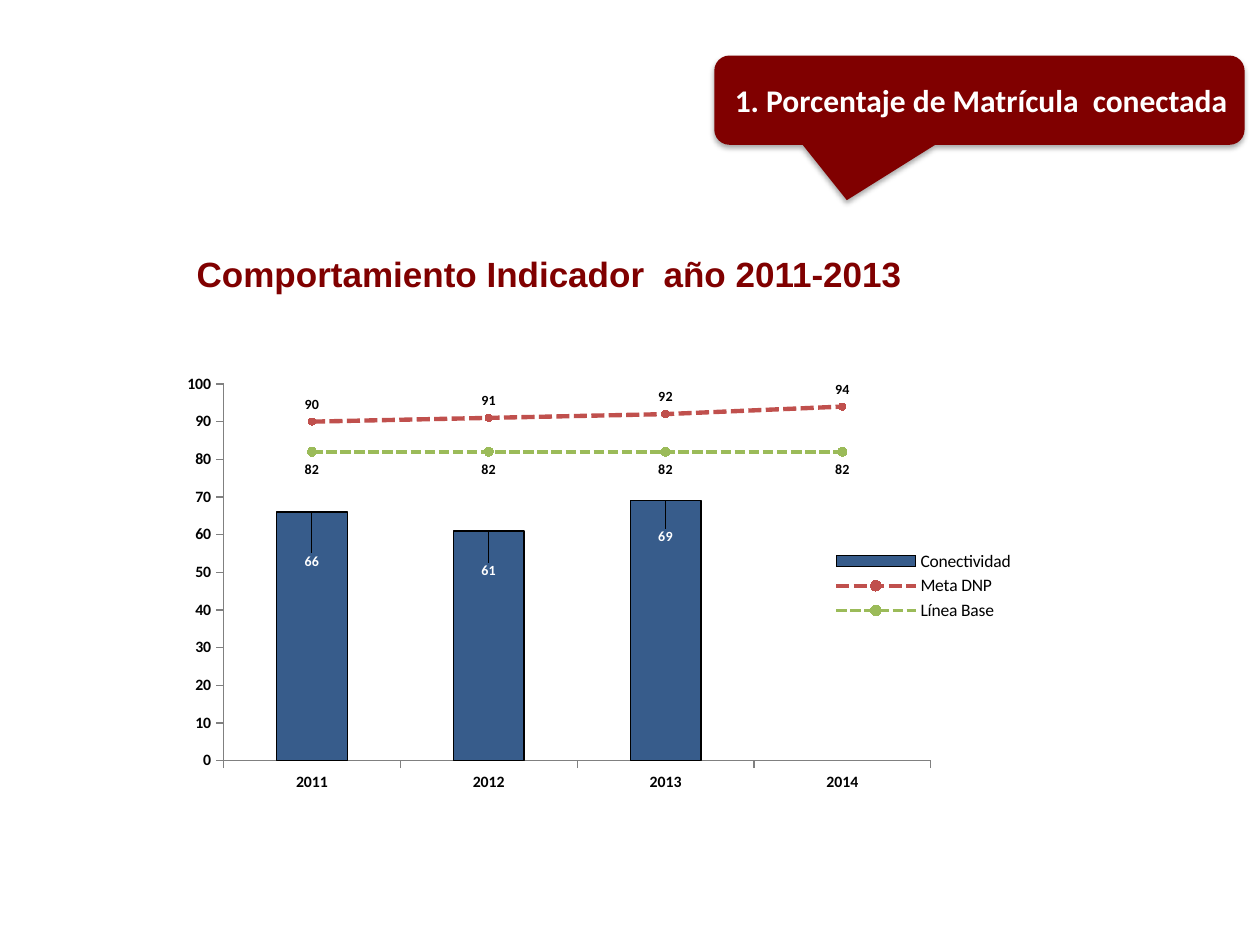
from lxml import etree
from pptx import Presentation
from pptx.chart.data import CategoryChartData
from pptx.dml.color import RGBColor
from pptx.enum.chart import (XL_CHART_TYPE, XL_LABEL_POSITION, XL_LEGEND_POSITION,
                             XL_MARKER_STYLE, XL_TICK_MARK)
from pptx.enum.dml import MSO_LINE
from pptx.enum.shapes import MSO_SHAPE
from pptx.enum.text import MSO_ANCHOR, PP_ALIGN
from pptx.oxml import parse_xml
from pptx.oxml.ns import nsdecls, qn
from pptx.util import Cm, Pt

MAROON = RGBColor(0x80, 0x00, 0x00)
WHITE = RGBColor(0xFF, 0xFF, 0xFF)
BLACK = RGBColor(0x00, 0x00, 0x00)
GRAY = RGBColor(0x80, 0x80, 0x80)
NAVY = RGBColor(0x1F, 0x49, 0x7D)
RED = RGBColor(0xC0, 0x50, 0x4D)
GREEN = RGBColor(0x9B, 0xBB, 0x59)


def style_font(font, size, color, name="Calibri", bold=True):
    font.size = Pt(size)
    font.bold = bold
    font.name = name
    font.color.rgb = color


def manual_layout(**values):
    tags = "".join(f'<c:{tag} val="{val}"/>' for tag, val in values.items())
    return parse_xml(f'<c:layout {nsdecls("c")}><c:manualLayout>{tags}'
                     '</c:manualLayout></c:layout>')


prs = Presentation()
prs.slide_width, prs.slide_height = Cm(25.4), Cm(19.05)
s = prs.slides.add_slide(prs.slide_layouts[5])

title = s.shapes.title
title.left, title.top, title.width, title.height = Cm(3.71), Cm(3.73), Cm(19.71), Cm(3.58)
tf = title.text_frame
tf.vertical_anchor = MSO_ANCHOR.MIDDLE
p = tf.paragraphs[0]
p.alignment = PP_ALIGN.LEFT
r = p.add_run()
r.text = "Comportamiento Indicador  año 2011-2013"
style_font(r.font, 20, MAROON, "Arial")

data = CategoryChartData()
data.categories = ["2011", "2012", "2013", "2014"]
data.add_series("Conectividad", (66, 61, 69, None))
data.add_series("Meta DNP", (90, 91, 92, 94))
data.add_series("Línea Base", (82, 82, 82, 82))
chart = s.shapes.add_chart(XL_CHART_TYPE.COLUMN_CLUSTERED, Cm(3.1), Cm(7.29),
                           Cm(17.6), Cm(9.04), data).chart
chart.has_title = False
style_font(chart.font, 10, BLACK, bold=False)
chart.has_legend = True
chart.legend.position = XL_LEGEND_POSITION.RIGHT
chart.legend.include_in_layout = False

for axis in (chart.category_axis, chart.value_axis):
    axis.has_major_gridlines = False
    axis.major_tick_mark = XL_TICK_MARK.OUTSIDE
    axis.format.line.color.rgb = GRAY
    style_font(axis.tick_labels.font, 9, BLACK)
chart.value_axis.minimum_scale = 0
chart.value_axis.maximum_scale = 100
chart.value_axis.major_unit = 10

plot_area = chart.plots[0]._element.getparent()
for old in plot_area.findall(qn("c:layout")):
    plot_area.remove(old)
plot_area.insert(0, manual_layout(layoutTarget="inner", xMode="edge", yMode="edge",
                                  x=0.08, y=0.05, w=0.81, h=0.84))

bar_chart = chart.plots[0]._element
line_chart = parse_xml(f'<c:lineChart {nsdecls("c")}><c:grouping val="standard"/>'
                       '<c:varyColors val="0"/><c:marker val="1"/></c:lineChart>')
for ser in bar_chart.findall(qn("c:ser"))[1:]:
    for invert in ser.findall(qn("c:invertIfNegative")):
        ser.remove(invert)
    line_chart.find(qn("c:marker")).addprevious(ser)
for ax_id in bar_chart.findall(qn("c:axId")):
    etree.SubElement(line_chart, qn("c:axId")).set("val", ax_id.get("val"))
bar_chart.addnext(line_chart)

bar_plot, line_plot = chart.plots
bar_plot.gap_width = 150
bar_plot.vary_by_categories = False
bars = bar_plot.series[0]
bars.format.fill.solid()
bars.format.fill.fore_color.rgb = NAVY
color = bars.format.fill._xPr.find(qn("a:solidFill"))[0]
etree.SubElement(color, qn("a:alpha")).set("val", "89000")
bars.format.line.color.rgb = BLACK
bars.format.line.width = Pt(0.75)
bars.data_labels.show_value = True
style_font(bars.data_labels.font, 8, WHITE)
for i, drop in enumerate((0.08, 0.06, 0.05)):
    label = bars.points[i].data_label
    style_font(label.font, 8, WHITE)
    label.position = XL_LABEL_POSITION.INSIDE_END
    idx = bars.data_labels._element.findall(qn("c:dLbl"))[i].find(qn("c:idx"))
    idx.addnext(manual_layout(x=0, y=drop))

line_styles = ((RED, 2.5, 4, XL_LABEL_POSITION.ABOVE),
               (GREEN, 2, 5, XL_LABEL_POSITION.BELOW))
for line, (color, width, size, position) in zip(line_plot.series, line_styles):
    line.smooth = False
    line.format.line.color.rgb = color
    line.format.line.width = Pt(width)
    line.format.line.dash_style = MSO_LINE.SQUARE_DOT
    line.marker.style = XL_MARKER_STYLE.CIRCLE
    line.marker.size = size
    line.marker.format.fill.solid()
    line.marker.format.fill.fore_color.rgb = color
    line.marker.format.line.color.rgb = color
    line.data_labels.show_value = True
    line.data_labels.position = position
    style_font(line.data_labels.font, 8, BLACK)

sp = s.shapes.add_shape(MSO_SHAPE.ROUNDED_RECTANGULAR_CALLOUT,
                        Cm(14.4), Cm(1.12), Cm(10.69), Cm(1.8))
for i, value in enumerate((-0.25, 1.12, 0.17)):
    sp.adjustments[i] = value
sp.fill.solid()
sp.fill.fore_color.rgb = MAROON
sp.line.fill.background()
sp.shadow.inherit = False
sp._element.spPr.find(qn("a:effectLst")).append(parse_xml(
    f'<a:outerShdw {nsdecls("a")} blurRad="{Pt(3.1)}" dist="{Pt(1.8)}" dir="5400000" '
    'rotWithShape="0"><a:srgbClr val="000000"><a:alpha val="35000"/></a:srgbClr>'
    '</a:outerShdw>'))
tf = sp.text_frame
tf.word_wrap = True
tf.vertical_anchor = MSO_ANCHOR.MIDDLE
p = tf.paragraphs[0]
p.alignment = PP_ALIGN.RIGHT
r = p.add_run()
r.text = "1. Porcentaje de Matrícula  conectada"
style_font(r.font, 18, WHITE)

prs.save("out.pptx")
